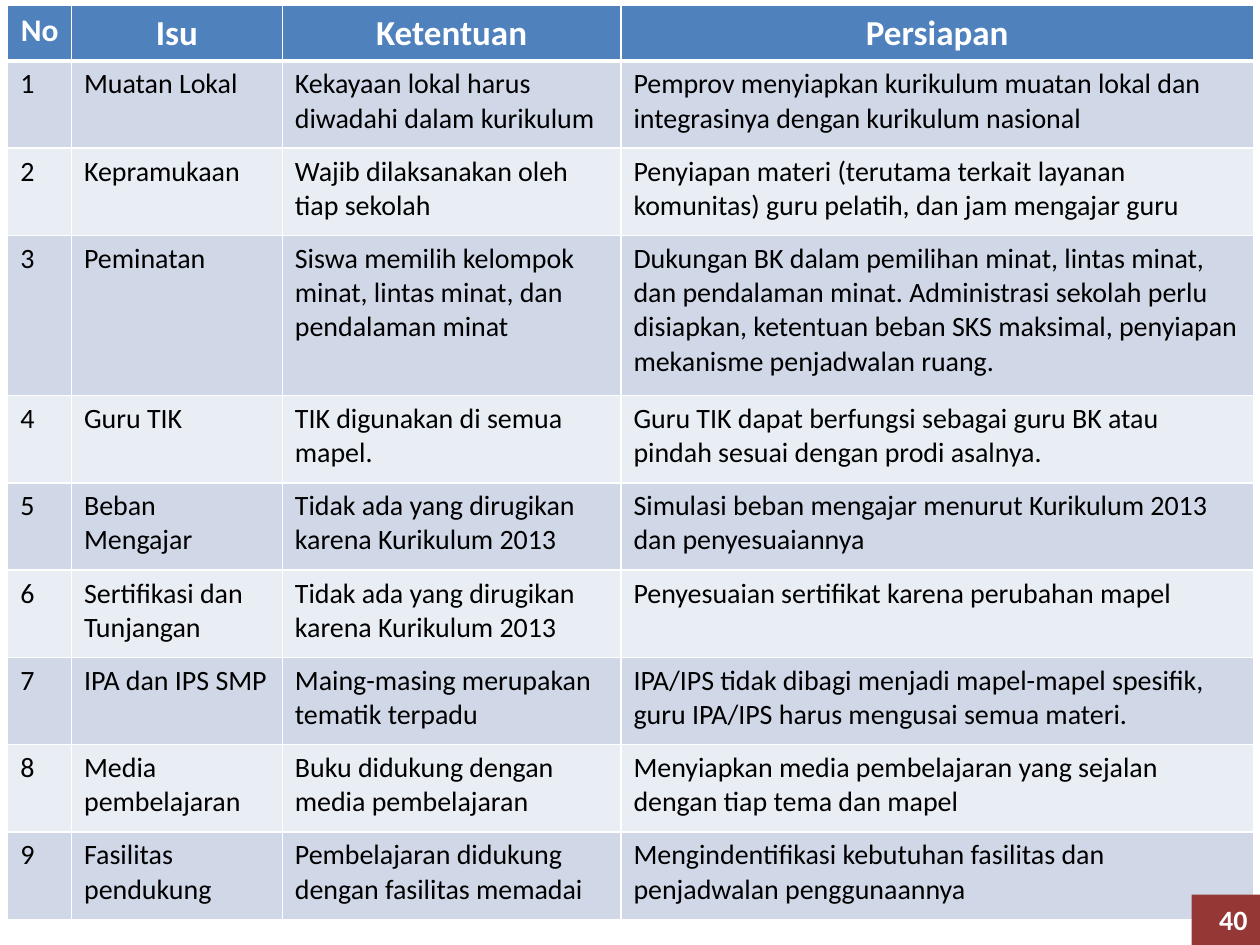
"""Build a slide with a table of curriculum issues, rules and preparations."""
import pptx
import pptx.dml.color
import pptx.enum.shapes
import pptx.enum.text
import pptx.oxml
import pptx.oxml.ns
import pptx.util

Pt = pptx.util.Pt
ALIGN = pptx.enum.text.PP_ALIGN

COLORS = {
    "header": "4F81BD",
    "odd": "D0D8E8",
    "even": "E9EDF4",
    "badge": "953735",
    "light": "FFFFFF",
    "dark": "000000",
}
HEADINGS = ["No", "Isu", "Ketentuan", "Persiapan"]
ISSUES = [
    ("Muatan Lokal", "Kekayaan lokal harus diwadahi dalam kurikulum",
     "Pemprov menyiapkan kurikulum muatan lokal dan integrasinya dengan kurikulum nasional"),
    ("Kepramukaan", "Wajib dilaksanakan oleh tiap sekolah",
     "Penyiapan materi (terutama terkait layanan komunitas) guru pelatih, dan jam mengajar guru"),
    ("Peminatan", "Siswa memilih kelompok minat, lintas minat, dan pendalaman minat",
     "Dukungan BK dalam pemilihan minat, lintas minat, dan pendalaman minat. "
     "Administrasi sekolah perlu disiapkan, ketentuan beban SKS maksimal, "
     "penyiapan mekanisme penjadwalan ruang."),
    ("Guru TIK", "TIK digunakan di semua mapel.",
     "Guru TIK dapat berfungsi sebagai guru BK atau pindah sesuai dengan prodi asalnya."),
    ("Beban Mengajar", "Tidak ada yang dirugikan karena Kurikulum 2013",
     "Simulasi beban mengajar menurut Kurikulum 2013 dan penyesuaiannya"),
    ("Sertifikasi dan Tunjangan", "Tidak ada yang dirugikan karena Kurikulum 2013",
     "Penyesuaian sertifikat karena perubahan mapel"),
    ("IPA dan IPS SMP", "Maing-masing merupakan tematik terpadu",
     "IPA/IPS tidak dibagi menjadi mapel-mapel spesifik, guru IPA/IPS harus mengusai semua materi."),
    ("Media pembelajaran", "Buku didukung dengan media pembelajaran",
     "Menyiapkan media pembelajaran yang sejalan dengan tiap tema dan mapel"),
    ("Fasilitas pendukung", "Pembelajaran didukung dengan fasilitas memadai",
     "Mengindentifikasi kebutuhan fasilitas dan penjadwalan penggunaannya"),
]
PAGE_NUMBER = "40"

SLIDE_SIZE = (720, 540)
TABLE_ORIGIN = (4.4, 3.1)
COLUMN_WIDTHS = [36.5, 120.5, 193.5, 361.5]
HEADER_HEIGHT, ISSUE_HEIGHT, LONG_ISSUE_HEIGHT = 31.5, 49.9, 91.4
LONG_ISSUE = 3
BADGE_BOX = (681, 511.2, 39, 28.8)


def rgb(name):
    return pptx.dml.color.RGBColor.from_string(COLORS[name])


def write(frame, text, size, color, bold, align):
    paragraph = frame.paragraphs[0]
    paragraph.alignment = align
    run = paragraph.add_run()
    run.text = text
    run.font.color.rgb = rgb(color)
    for key, value in {"name": "Calibri", "size": Pt(size), "bold": bold}.items():
        setattr(run.font, key, value)


def add_borders(cell, widths):
    properties = cell._tc.get_or_add_tcPr()
    for side, width in widths.items():
        properties.append(pptx.oxml.parse_xml(
            f'<a:ln{side} {pptx.oxml.ns.nsdecls("a")} w="{Pt(width)}"><a:solidFill>'
            f'<a:srgbClr val="{COLORS["light"]}"/></a:solidFill></a:ln{side}>'))


def add_issue_table(slide):
    rows = [HEADINGS] + [(str(n), *issue) for n, issue in enumerate(ISSUES, 1)]
    heights = [HEADER_HEIGHT] + [ISSUE_HEIGHT] * len(ISSUES)
    heights[LONG_ISSUE] = LONG_ISSUE_HEIGHT
    extent = (*TABLE_ORIGIN, sum(COLUMN_WIDTHS), sum(heights))
    table = slide.shapes.add_table(len(rows), len(HEADINGS), *map(Pt, extent)).table
    for column, width in zip(table.columns, COLUMN_WIDTHS):
        column.width = Pt(width)
    for r, (texts, height) in enumerate(zip(rows, heights)):
        table.rows[r].height = Pt(height)
        is_header = r == 0
        fill = "header" if is_header else "odd" if r % 2 else "even"
        for c, text in enumerate(texts):
            cell = table.cell(r, c)
            add_borders(cell, {"L": 1, "R": 1, "T": 3 if r == 1 else 1,
                               "B": 3 if is_header else 1})
            cell.fill.solid()
            cell.fill.fore_color.rgb = rgb(fill)
            if is_header:
                write(cell.text_frame, text, 20 if c else 18, "light", True, ALIGN.CENTER)
            else:
                write(cell.text_frame, text, 16, "dark", False, ALIGN.LEFT)


def add_page_badge(slide):
    badge = slide.shapes.add_shape(
        pptx.enum.shapes.MSO_SHAPE.RECTANGLE, *map(Pt, BADGE_BOX))
    badge.shadow.inherit = False
    badge.fill.solid()
    badge.fill.fore_color.rgb = rgb("badge")
    badge.line.fill.background()
    badge.text_frame.vertical_anchor = pptx.enum.text.MSO_ANCHOR.MIDDLE
    write(badge.text_frame, PAGE_NUMBER, 16, "light", True, ALIGN.RIGHT)


def main():
    deck = pptx.Presentation()
    deck.slide_width, deck.slide_height = map(Pt, SLIDE_SIZE)
    slide = deck.slides.add_slide(deck.slide_layouts[6])
    add_issue_table(slide)
    add_page_badge(slide)
    deck.save("out.pptx")


if __name__ == "__main__":
    main()
